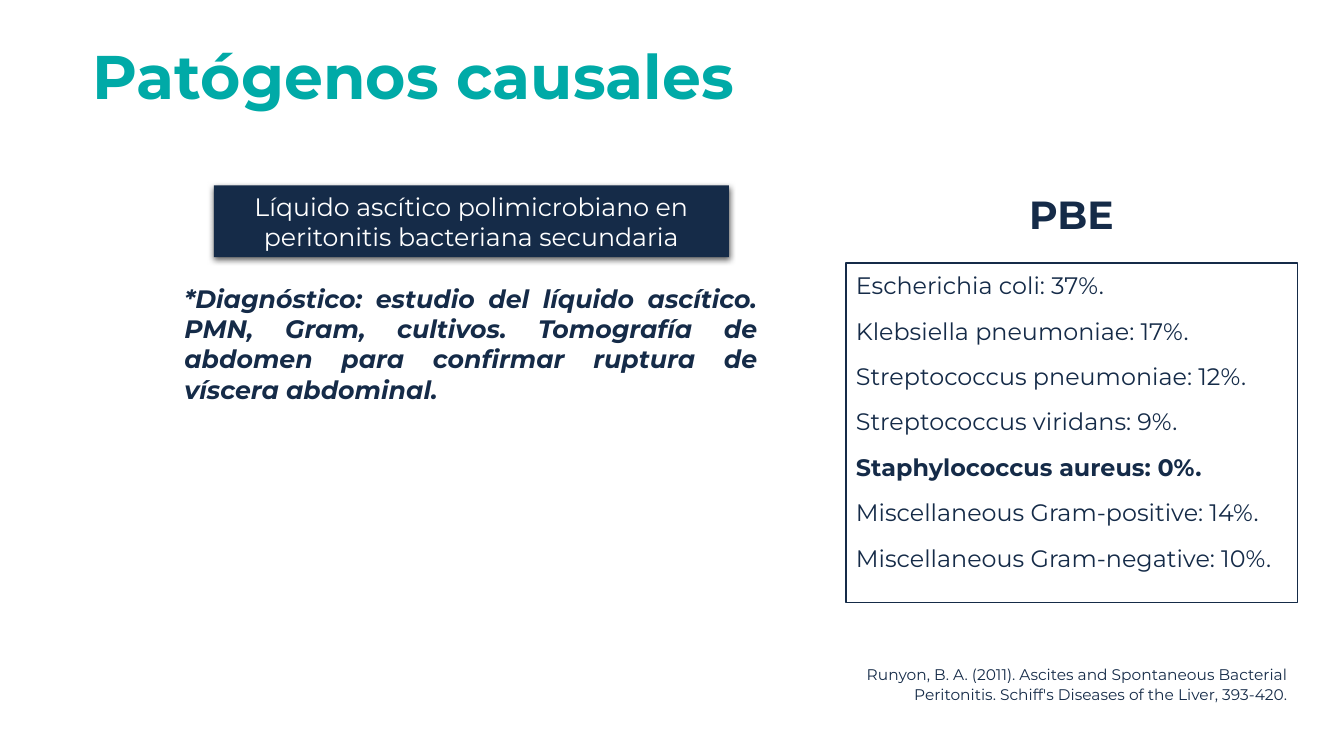
from lxml import etree
from pptx import Presentation
from pptx.dml.color import RGBColor
from pptx.enum.shapes import MSO_SHAPE
from pptx.enum.text import MSO_ANCHOR, MSO_AUTO_SIZE, PP_ALIGN
from pptx.oxml import parse_xml
from pptx.oxml.ns import nsdecls
from pptx.util import Inches, Pt

RECTANGLE = MSO_SHAPE.RECTANGLE
TOP, MIDDLE = MSO_ANCHOR.TOP, MSO_ANCHOR.MIDDLE
LEFT, CENTER, RIGHT, JUSTIFY = (
    PP_ALIGN.LEFT, PP_ALIGN.CENTER, PP_ALIGN.RIGHT, PP_ALIGN.JUSTIFY)
NO_AUTOFIT = MSO_AUTO_SIZE.NONE
NAVY = RGBColor(0x15, 0x2B, 0x48)
TEAL = RGBColor(0x00, 0xAA, 0xA7)
WHITE = RGBColor(0xFF, 0xFF, 0xFF)
FONT = "Montserrat"
WIDTH, HEIGHT = Inches(13.33), Inches(7.5)
COLUMN, ROW = WIDTH / 1333, HEIGHT / 750

PATHOGENS = [
    ("Escherichia coli", 37),
    ("Klebsiella pneumoniae", 17),
    ("Streptococcus pneumoniae", 12),
    ("Streptococcus viridans", 9),
    ("Staphylococcus aureus", 0),
    ("Miscellaneous Gram-positive", 14),
    ("Miscellaneous Gram-negative", 10),
]
HIGHLIGHTED = "Staphylococcus aureus"


def area(left, top, width, height):
    """Turn grid columns and rows into slide lengths."""
    return (round(left * COLUMN), round(top * ROW),
            round(width * COLUMN), round(height * ROW))


def write(frame, lines, size, color=NAVY, align=LEFT, bold=False,
          italic=False, anchor=TOP, wrap=True):
    """Fill a text frame with one evenly formatted paragraph per line."""
    frame.word_wrap = wrap
    frame.auto_size = NO_AUTOFIT
    frame.vertical_anchor = anchor
    for index, line in enumerate(lines):
        paragraph = frame.paragraphs[0] if index == 0 else frame.add_paragraph()
        paragraph.text = line
        paragraph.alignment = align
        for run in paragraph.runs:
            run.font.name = FONT
            run.font.size = Pt(size)
            run.font.bold = bold
            run.font.italic = italic
            run.font.color.rgb = color
    return frame.paragraphs


def add_title(slide, place, text):
    """Move and format the title placeholder."""
    title = slide.shapes.title
    title.left, title.top, title.width, title.height = place
    write(title.text_frame, [text], 44, TEAL, bold=True, wrap=False)
    title.text_frame.paragraphs[0].line_spacing = 1.0


def add_text(slide, place, text, size, **style):
    """Add a text box holding one paragraph and return the paragraph."""
    box = slide.shapes.add_textbox(*place)
    return write(box.text_frame, [text], size, **style)[0]


def add_banner(slide, place, text):
    """Add a filled rectangle with a soft shadow below it."""
    banner = slide.shapes.add_shape(RECTANGLE, *place)
    banner.fill.solid()
    banner.fill.fore_color.rgb = NAVY
    banner.line.fill.background()
    banner.shadow.inherit = False
    effects = banner.fill._xPr.find(
        etree.QName("http://schemas.openxmlformats.org/drawingml/2006/main",
                    "effectLst"))
    effects.append(parse_xml(
        f'<a:outerShdw {nsdecls("a")} blurRad="{Pt(4.5)}" dist="{Pt(1.5)}" '
        'dir="5400000" algn="ctr" rotWithShape="0"><a:srgbClr val="000000">'
        '<a:alpha val="63000"/></a:srgbClr></a:outerShdw>'))
    write(banner.text_frame, [text], 18, WHITE, CENTER, anchor=MIDDLE)


def add_pathogen_list(slide, place):
    """Add the outlined list of pathogens with their shares."""
    panel = slide.shapes.add_shape(RECTANGLE, *place)
    panel.fill.background()
    panel.line.color.rgb = NAVY
    panel.line.width = Pt(1)
    panel.shadow.inherit = False
    lines = [f"{name}: {share}%." for name, share in PATHOGENS]
    paragraphs = write(panel.text_frame, lines, 17)
    for index, paragraph in enumerate(paragraphs):
        paragraph.line_spacing = 1.1
        paragraph.space_before = Pt(10 if index else 0)
        paragraph.runs[0].font.bold = PATHOGENS[index][0] == HIGHLIGHTED


def main():
    """Build the slide and save it."""
    deck = Presentation()
    deck.slide_width, deck.slide_height = WIDTH, HEIGHT
    slide = deck.slides.add_slide(deck.slide_layouts[5])
    add_title(slide, area(82, 33, 664, 84), "Patógenos causales")
    add_pathogen_list(slide, area(839, 261, 448, 337))
    add_text(slide, area(1011, 184, 104, 57), "PBE", 28, bold=True, wrap=False)
    add_banner(slide, area(212, 184, 511, 71),
               "Líquido ascítico polimicrobiano en peritonitis bacteriana "
               "secundaria")
    add_text(slide, area(173, 276, 588, 131),
             "*Diagnóstico: estudio del líquido ascítico. PMN, Gram, cultivos. "
             "Tomografía de abdomen para confirmar ruptura de víscera abdominal.",
             18, align=JUSTIFY, bold=True, italic=True)
    citation = add_text(
        slide, area(787, 654, 500, 49),
        "Runyon, B. A. (2011). Ascites and Spontaneous Bacterial Peritonitis. "
        "Schiff's Diseases of the Liver, 393-420.", 11, align=RIGHT)
    citation.line_spacing = 1.07
    deck.save("out.pptx")


if __name__ == "__main__":
    main()
